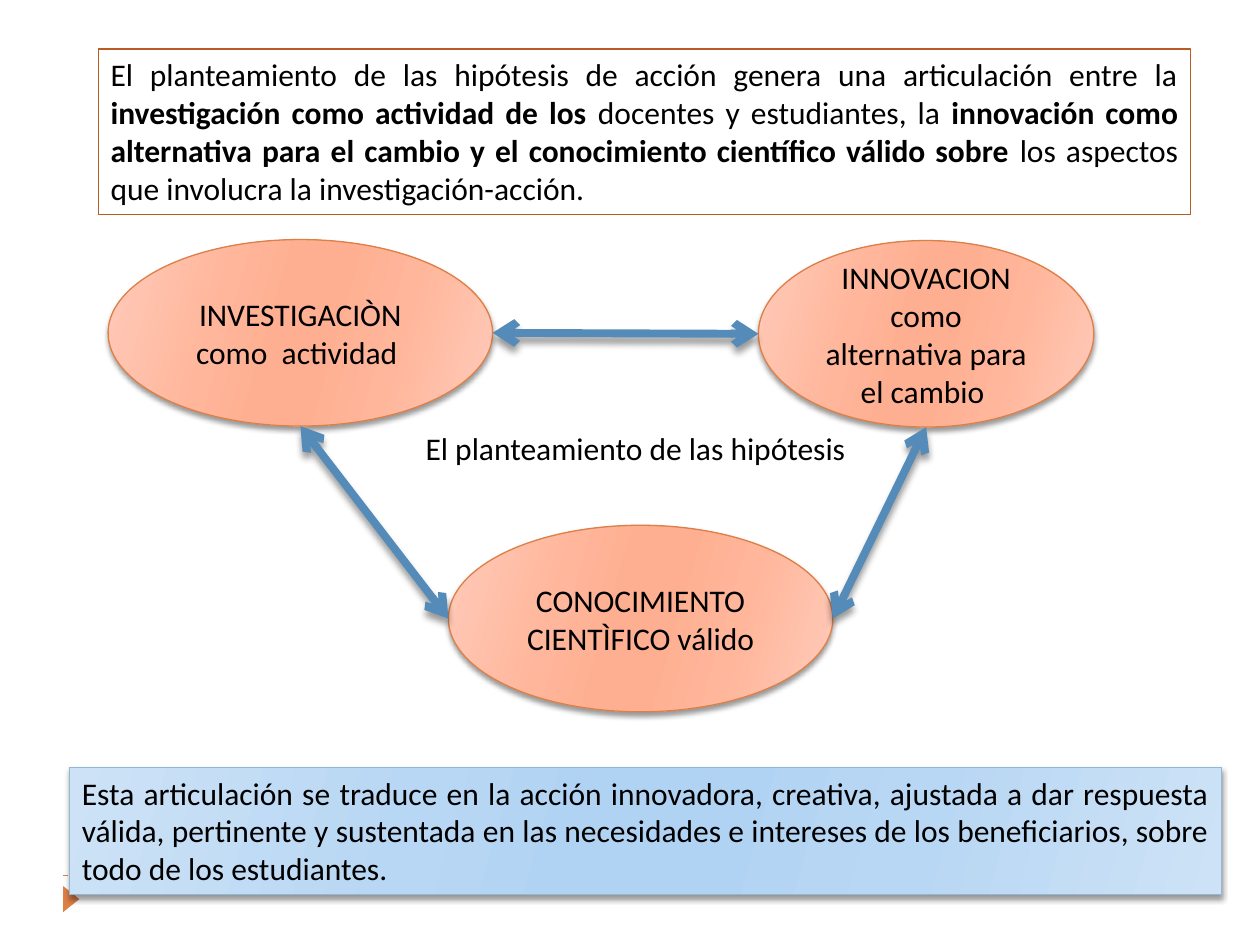
import pptx
import pptx.util
from lxml import etree
from pptx.dml.color import RGBColor
from pptx.enum.dml import MSO_LINE
from pptx.enum.shapes import MSO_CONNECTOR, MSO_SHAPE
from pptx.enum.text import MSO_ANCHOR, MSO_AUTO_SIZE, PP_ALIGN
from pptx.oxml.ns import qn
from pptx.util import Cm, Pt

COLORS = {
    "text": "000000", "orange": "DD8047", "frame": "B95B22",
    "arrow": "558BB8", "blue": "94B6D2", "shadow": "000000",
}
STOPS = (0, 30, 45, 55, 73, 100)
GRADIENTS = {  # edge, middle and centre tones, mirrored over STOPS
    "orange": ("FFCBBA", "FFB69B", "FFAF91"),
    "blue": ("CDE2F6", "B8D7F4", "B1D3F3"),
}


def rgb(name):
    return RGBColor.from_string(COLORS[name])


def sub(parent, tag, **attrs):
    return etree.SubElement(parent, qn(tag), {k: str(v) for k, v in attrs.items()})


def add_color(parent, value, alpha=None):
    clr = sub(parent, "a:srgbClr", val=value)
    if alpha is not None:
        sub(clr, "a:alpha", val=alpha * 1000)


def set_gradient(sp, name):
    sp.fill.gradient()
    grad = sp._element.spPr.find(qn("a:gradFill"))
    for child in list(grad):
        grad.remove(child)
    stops = sub(grad, "a:gsLst")
    tones = GRADIENTS[name]
    for pos, tone in zip(STOPS, tones + tones[::-1]):
        add_color(sub(stops, "a:gs", pos=pos * 1000), tone)
    sub(grad, "a:lin", ang=16 * 60000, scaled=0)


def set_shadow(sp, blur, dist):
    spPr = sp._element.spPr
    effects = spPr.find(qn("a:effectLst"))
    if effects is None:
        effects = sub(spPr, "a:effectLst")
    outer = sub(effects, "a:outerShdw", blurRad=Pt(blur), dist=Pt(dist),
                dir=90 * 60000, rotWithShape=0)
    add_color(outer, COLORS["shadow"], alpha=40)


def add_text(p, text, bold=False, size=18, font="Calibri", color="text"):
    r = p.add_run()
    r.text = text
    r.font.size, r.font.name, r.font.bold = Pt(size), font, bold
    r.font.color.rgb = rgb(color)


def add_shape(s, kind, box, line=None, gradient=None):
    sp = s.shapes.add_shape(kind, *(Cm(v) for v in box))
    sp.shadow.inherit = False
    if gradient:
        set_gradient(sp, gradient)
        set_shadow(sp, 3, 2)
    else:
        sp.fill.background()
    if line:
        sp.line.color.rgb = rgb(line)
        sp.line.width = Pt(0.75)
    else:
        sp.line.fill.background()
    return sp


def add_line(s, start, end, color, width):
    ln = s.shapes.add_connector(MSO_CONNECTOR.STRAIGHT, *(Cm(v) for v in start + end))
    ln.line.color.rgb = rgb(color)
    ln.line.width = Pt(width)
    sub(ln._element.spPr, "a:effectLst")
    return ln


def footer_marks(s, box):
    """Dashed rule with a small triangle below its left end."""
    x, y, w = box
    rule = add_line(s, (x, y), (x + w, y), "orange", 0.75)
    rule.line.dash_style = MSO_LINE.DASH
    tri = add_shape(s, MSO_SHAPE.ISOSCELES_TRIANGLE, (x - 0.1, y + 0.31, 0.53, 0.33))
    tri.rotation = 90
    tri.fill.solid()
    tri.fill.fore_color.rgb = rgb("orange")


def paragraph_box(s, box, runs, line, gradient=None):
    """Justified paragraph in a frame; runs are (text, bold) pairs."""
    sp = add_shape(s, MSO_SHAPE.RECTANGLE, box, line, gradient)
    tf = sp.text_frame
    tf.word_wrap = True
    tf.auto_size = MSO_AUTO_SIZE.SHAPE_TO_FIT_TEXT
    tf.vertical_anchor = MSO_ANCHOR.TOP
    p = tf.paragraphs[0]
    p.alignment = PP_ALIGN.JUSTIFY
    for text, bold in runs:
        add_text(p, text, bold=bold)


def ellipse(s, box, text):
    sp = add_shape(s, MSO_SHAPE.OVAL, box, "orange", "orange")
    tf = sp.text_frame
    tf.word_wrap = True
    tf.vertical_anchor = MSO_ANCHOR.MIDDLE
    p = tf.paragraphs[0]
    p.alignment = PP_ALIGN.CENTER
    add_text(p, text)


def side(box, name):
    x, y, w, h = box
    return {"left": (x, y + h / 2), "right": (x + w, y + h / 2),
            "bottom": (x + w / 2, y + h)}[name]


def triangle_diagram(s, box):
    """Three ellipses joined by double arrows around a label."""
    x, y, w, h = box
    big, small, tall = 7.75, 6.76, 3.76
    research = (x, y, big, tall)
    knowledge = (x + 6.86, y + h - tall, big, tall)
    innovation = (x + w - small, y + 0.02, small, tall)

    ellipse(s, research, "INVESTIGACIÒN como  actividad ")
    ellipse(s, knowledge, "CONOCIMIENTO CIENTÌFICO válido")
    ellipse(s, innovation, "INNOVACION como alternativa para el cambio ")

    # Double arrows
    for start, end in (
        (side(research, "right"), side(innovation, "left")),
        (side(knowledge, "right"), side(innovation, "bottom")),
        (side(research, "bottom"), side(knowledge, "left")),
    ):
        ln = add_line(s, start, end, "arrow", 4.5)
        set_shadow(ln, 4, 3.4)
        for tag in ("a:headEnd", "a:tailEnd"):
            sub(ln.line._get_or_add_ln(), tag, type="arrow")

    # Label in the middle
    tb = s.shapes.add_textbox(Cm(x + 6.15), Cm(y + 3.7), Cm(9.12), Cm(1.02))
    tf = tb.text_frame
    tf.word_wrap = False
    tf.auto_size = MSO_AUTO_SIZE.SHAPE_TO_FIT_TEXT
    add_text(tf.paragraphs[0], "El planteamiento de las hipótesis")


def main():
    prs = pptx.Presentation()
    prs.slide_width, prs.slide_height = Cm(25.4), Cm(19.05)
    s = prs.slides.add_slide(prs.slide_layouts[6])

    footer_marks(s, (1.27, 17.65, 22.86))
    paragraph_box(s, (1.98, 0.99, 22.02, 3.33), [
        ("El planteamiento de las hipótesis de acción genera una articulación entre la ", False),
        ("investigación como actividad de los ", True),
        ("docentes y estudiantes, la ", False),
        ("innovación como alternativa para el cambio y el conocimiento científico "
         "válido sobre ", True),
        ("los aspectos que involucra la investigación-acción.", False),
    ], "frame")
    triangle_diagram(s, (2.18, 4.83, 19.87, 9.52))
    paragraph_box(s, (1.4, 15.47, 23.22, 2.57), [
        ("Esta articulación se traduce en la acción innovadora, creativa, ajustada a dar "
         "respuesta válida, pertinente y sustentada en las necesidades e intereses de los "
         "beneficiarios, sobre todo de los estudiantes.", False),
    ], "blue", "blue")
    prs.save("out.pptx")


if __name__ == "__main__":
    main()
